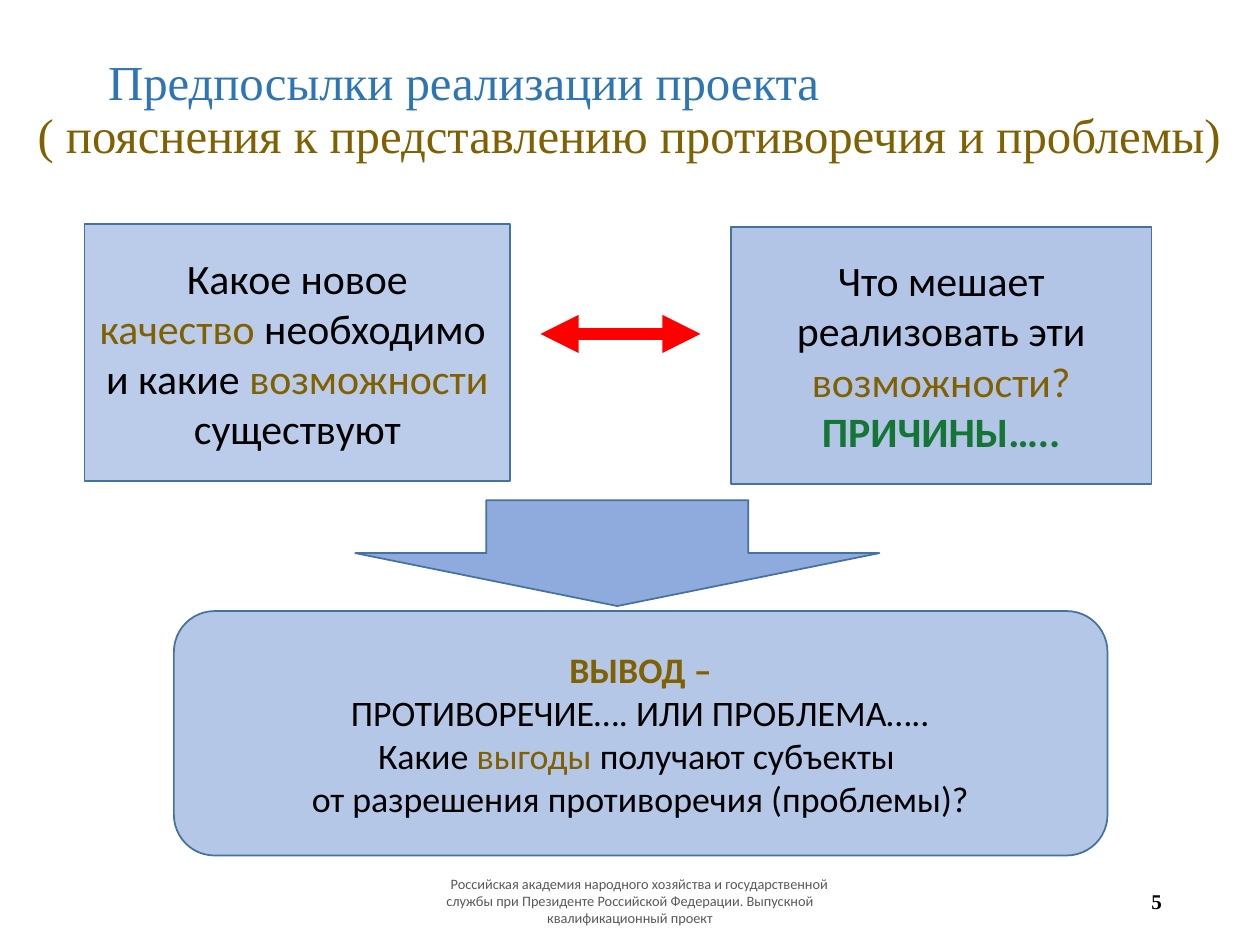
import pptx
import pptx.util
import pptx.dml.color
import pptx.enum.shapes
import pptx.enum.text
import pptx.oxml
import pptx.oxml.ns
from pptx.util import Inches

COLORS = {
    "black": "000000", "title": "2E75B6", "accent": "806000",
    "reason": "157535", "footer": "595959", "panel": "8FAADC",
    "conclusion": "B4C7E7", "outline": "43739E", "conflict": "FF0000",
}
SHAPES = pptx.enum.shapes.MSO_SHAPE
ALIGN = pptx.enum.text.PP_ALIGN


def rgb(name):
    return pptx.dml.color.RGBColor.from_string(COLORS[name])


def add_xml_child(parent, tag, **attributes):
    child = pptx.oxml.parse_xml(f"<a:{tag} {pptx.oxml.ns.nsdecls('a')}/>")
    for key, value in attributes.items():
        child.set(key, str(value))
    parent.append(child)


def write(shape, paragraphs, size, font="Calibri", align=ALIGN.CENTER,
          bold=False, line_spacing=None, first_indent=0):
    """Each paragraph is a list of (text, color) or (text, color, bold) runs."""
    frame = shape.text_frame
    frame.word_wrap = True
    frame.vertical_anchor = pptx.enum.text.MSO_ANCHOR.MIDDLE
    for index, runs in enumerate(paragraphs):
        paragraph = frame.add_paragraph() if index else frame.paragraphs[0]
        paragraph.alignment = align
        paragraph.line_spacing = line_spacing
        paragraph.font.size = pptx.util.Pt(size)
        paragraph.font.name = font
        paragraph.font.bold = bold
        if first_indent and index == 0:
            paragraph._p.get_or_add_pPr().set("indent", str(Inches(first_indent)))
        for text, color, *run_bold in runs:
            run = paragraph.add_run()
            run.text = text
            run.font.name = font
            run.font.size = pptx.util.Pt(size)
            run.font.bold = run_bold[0] if run_bold else bold
            run.font.color.rgb = rgb(color)


def add_text(slide, box, paragraphs, size, **style):
    textbox = slide.shapes.add_textbox(*map(Inches, box))
    write(textbox, paragraphs, size, **style)


def add_panel(slide, kind, box, fill, opacity=100):
    shape = slide.shapes.add_shape(kind, *map(Inches, box))
    shape.shadow.inherit = False
    shape.fill.solid()
    shape.fill.fore_color.rgb = rgb(fill)
    if opacity < 100:
        color = shape._element.spPr.find(".//" + pptx.oxml.ns.qn("a:srgbClr"))
        add_xml_child(color, "alpha", val=opacity * 1000)
    shape.line.color.rgb = rgb("outline")
    shape.line.width = pptx.util.Pt(1)
    return shape


def add_double_arrow(slide, left, right, y):
    arrow = slide.shapes.add_connector(
        pptx.enum.shapes.MSO_CONNECTOR.STRAIGHT,
        Inches(left), Inches(y), Inches(right), Inches(y))
    arrow.line.color.rgb = rgb("conflict")
    arrow.line.width = pptx.util.Pt(7.25)
    line = arrow.line._get_or_add_ln()
    for end in ("headEnd", "tailEnd"):
        add_xml_child(line, end, type="triangle")
    add_xml_child(arrow._element.spPr, "effectLst")


def add_title(slide, box):
    add_text(slide, box, [
        [("Предпосылки реализации проекта", "title")],
        [("( пояснения к представлению противоречия и проблемы)", "accent")],
    ], 27.9, font="Times New Roman", align=ALIGN.LEFT, line_spacing=0.9,
        first_indent=0.56)


def add_contradiction(slide, left, top, width, height):
    # Desired quality against the obstacles
    quality = add_panel(slide, SHAPES.RECTANGLE, (left, top, 3.38, height), "panel", 60)
    write(quality, [
        [("Какое новое", "black")],
        [("качество ", "accent"), ("необходимо ", "black")],
        [("и какие ", "black"), ("возможности ", "accent"), ("существуют", "black")],
    ], 23.9)
    obstacles = add_panel(slide, SHAPES.RECTANGLE,
                          (left + width - 3.34, top + 0.02, 3.34, height), "panel", 68)
    write(obstacles, [
        [("Что мешает реализовать эти ", "black"), ("возможности?", "accent")],
        [("ПРИЧИНЫ…..", "reason", True)],
    ], 23.9)
    add_double_arrow(slide, left + 3.62, left + 4.89, top + 0.87)


def add_conclusion(slide, left, top, width, height):
    panel = add_panel(slide, SHAPES.ROUNDED_RECTANGLE,
                      (left, top, width, height), "conclusion")
    write(panel, [
        [("ВЫВОД –", "accent", True)],
        [("ПРОТИВОРЕЧИЕ…. ИЛИ ПРОБЛЕМА…..", "black")],
        [("Какие ", "black"), ("выгоды ", "accent"), ("получают субъекты ", "black")],
        [("от разрешения противоречия (проблемы)?", "black")],
    ], 20.5)
    # Arrow leading down into the conclusion
    add_panel(slide, SHAPES.DOWN_ARROW, (left + 1.44, top - 0.88, 4.16, 0.84), "panel")


def add_footer(slide, top, height):
    add_text(slide, (3.31, top, 3.38, height), [[(
        "Российская академия народного хозяйства и государственной службы "
        "при Президенте Российской Федерации. Выпускной квалификационный проект",
        "footer")]], 8.2, first_indent=0.15)
    add_text(slide, (7.07, top, 2.25, height), [[("5", "black")]], 12,
             font="Times New Roman", align=ALIGN.RIGHT, bold=True)


def main():
    presentation = pptx.Presentation()
    presentation.slide_width = Inches(10)
    presentation.slide_height = Inches(7.5)
    slide = presentation.slides.add_slide(presentation.slide_layouts[6])
    add_title(slide, (0.2, 0.29, 9.68, 1.18))
    add_footer(slide, 6.95, 0.4)
    add_contradiction(slide, 0.67, 1.78, 8.47, 2.04)
    add_conclusion(slide, 1.38, 4.85, 7.41, 1.94)
    presentation.save("out.pptx")


if __name__ == "__main__":
    main()
